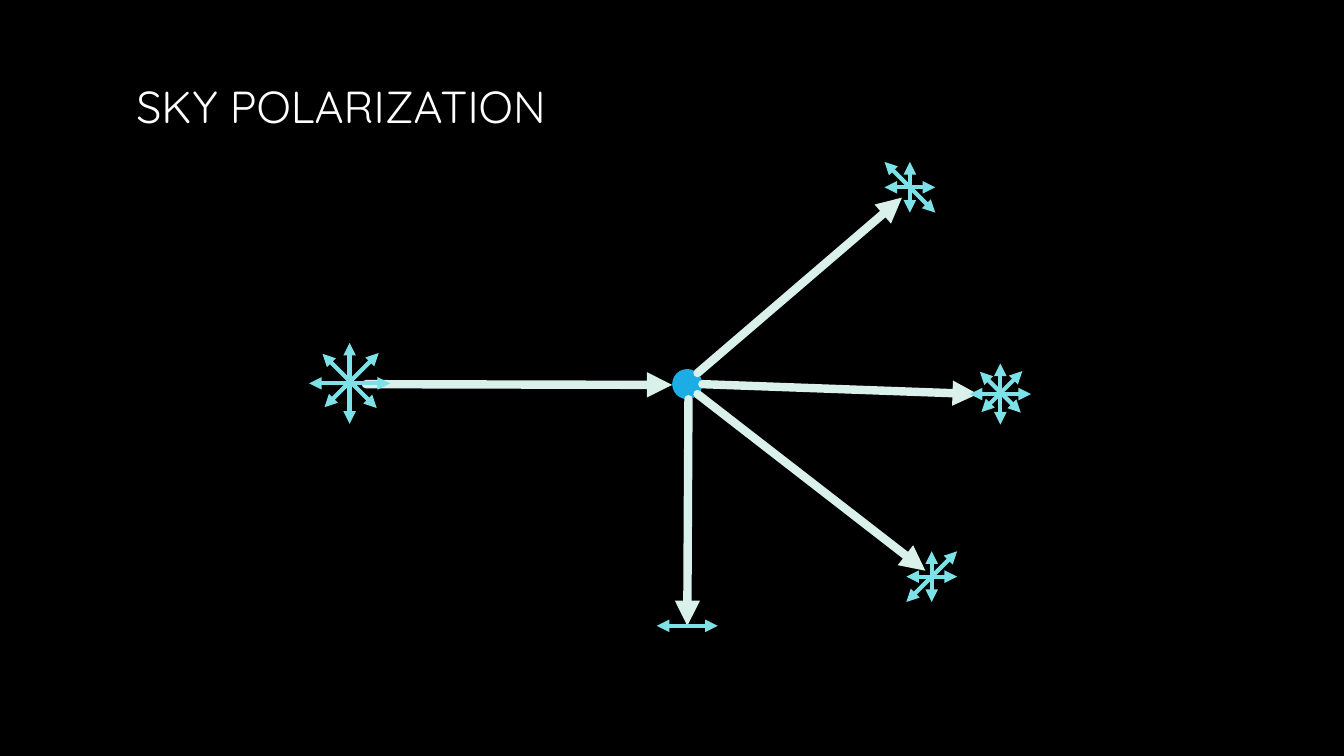
from lxml.etree import SubElement as Sub
from pptx import Presentation as Deck
from pptx.dml.color import RGBColor as Rgb
from pptx.enum.shapes import MSO_CONNECTOR as Link, MSO_SHAPE as Form
from pptx.enum.text import MSO_ANCHOR as Anchor, PP_ALIGN as Align
from pptx.oxml.ns import qn
from pptx.util import Cm, Pt

WHITE, BLACK = "FFFFFF", "000000"
BLUE, MINT, AQUA = "1CADE4", "D9F1EA", "7DE2E7"

AXES = {"flat": (1, 0), "tall": (0, 1), "fall": (1, 1), "rise": (1, -1)}
SHIFT = {"fall": (0, -0.06), "rise": (0.05, -0.08)}

RAYS = [
    (9.22, 9.68, 16.94, 9.7),
    (17.35, 10.06, 17.32, 15.77),
    (17.58, 9.4, 22.73, 4.98),
    (17.58, 9.93, 23.32, 14.38),
    (17.7, 9.68, 24.64, 9.93),
]
STARS = [
    (25.21, 9.93, 0.77),
    (8.81, 9.66, 1.02),
]
PARTIAL = [
    (23.48, 14.53, 0.64, "rise"),
    (22.93, 4.72, 0.64, "fall"),
]


def tint(code):
    return Rgb.from_string(code)


def paint(fill, code):
    fill.solid()
    fill.fore_color.rgb = tint(code)


def apply(item, values):
    for name, value in values.items():
        setattr(item, name, value)


def arrow(shapes, ends, code, width, tips):
    link = shapes.add_connector(Link.STRAIGHT, *map(Cm, ends))
    paint(link.line.fill, code)
    link.line.width = Pt(width)
    props = link.element.spPr
    edge = props.find(qn("a:ln"))
    edge.set("cap", "rnd")
    for tip in tips:
        Sub(edge, qn(f"a:{tip}"), type="triangle")
    Sub(props, qn("a:effectLst"))


def swing(shapes, x, y, reach, axis):
    dx, dy = (reach * step for step in AXES[axis])
    ends = (x - dx, y - dy, x + dx, y + dy)
    arrow(shapes, ends, AQUA, 3, ("headEnd", "tailEnd"))


def cross(shapes, x, y, reach):
    group = shapes.add_group_shape().shapes
    for axis in ("tall", "flat"):
        swing(group, x, y, reach, axis)
    return group


def star(shapes, x, y, reach):
    group = cross(shapes, x, y, reach)
    for axis, (dx, dy) in SHIFT.items():
        swing(group, x + dx * reach, y + dy * reach, reach * 0.67, axis)


def head(slide, text):
    title = slide.shapes.title
    apply(title, {"left": Cm(3.18), "top": Cm(0.03),
                  "width": Cm(27.51), "height": Cm(5.28)})
    frame = title.text_frame
    apply(frame, {"text": text, "vertical_anchor": Anchor.MIDDLE,
                  "word_wrap": True})
    para = frame.paragraphs[0]
    para.alignment = Align.LEFT
    font = para.runs[0].font
    apply(font, {"name": "Quicksand", "size": Pt(32), "bold": False})
    font.color.rgb = tint(WHITE)


def dot(shapes, x, y, size):
    ball = shapes.add_shape(Form.OVAL, *map(Cm, (x, y, size, size)))
    ball.shadow.inherit = False
    paint(ball.fill, BLUE)
    ball.line.fill.background()


def main():
    deck = Deck()
    apply(deck, {"slide_width": Cm(33.87), "slide_height": Cm(19.05)})
    slide = deck.slides.add_slide(deck.slide_layouts[5])
    paint(slide.background.fill, BLACK)
    shapes = slide.shapes

    head(slide, "SKY POLARIZATION")
    dot(shapes, 16.94, 9.3, 0.76)
    for ray in RAYS:
        arrow(shapes, ray, MINT, 6, ("tailEnd",))
    for x, y, reach in STARS:
        star(shapes, x, y, reach)
    swing(shapes, 17.32, 15.77, 0.77, "flat")
    for x, y, reach, axis in PARTIAL:
        swing(cross(shapes, x, y, reach), x, y, reach, axis)

    deck.save("out.pptx")


if __name__ == "__main__":
    main()
